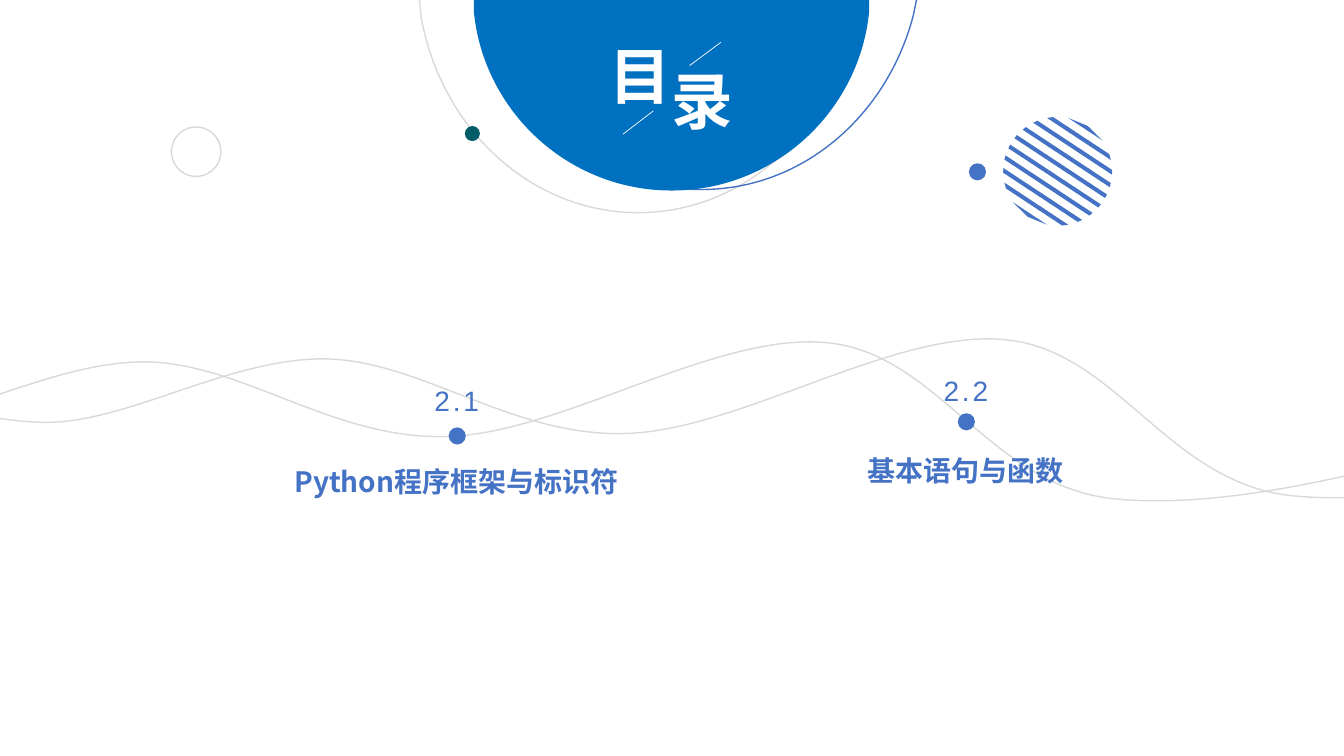
import math

import pptx
import pptx.dml.color
import pptx.enum.shapes
import pptx.enum.text
import pptx.oxml.ns
import pptx.util
from lxml import etree
from pptx.util import Inches

COLORS = {
    "blue": "4472C4",
    "deep_blue": "0070C0",
    "teal": "035C67",
    "gray": "D9D9D9",
    "white": "FFFFFF",
}
LATIN = "Arial"
CHINESE = "Noto Sans CJK SC"


def rgb(name):
    return pptx.dml.color.RGBColor.from_string(COLORS[name])


def corners(points):
    return [[point] for point in points]


def curves(points):
    return [points[index:index + 3] for index in range(0, len(points), 3)]


def bowl(center, bottom, top_half, rim, shoulder, base_half):
    half = [(top_half, 0), rim, shoulder, (base_half, bottom)]
    right = [(center + x, y) for x, y in half]
    left = [(center - x, y) for x, y in reversed(half)]
    arc = right[2:] + [(center, bottom)] + left[:3]
    return corners(right[:2]) + curves(arc) + corners(left[3:])


def stripes(center, radius, count, thickness):
    pitch = (2 * radius - thickness) / (count - 1)
    contours = []
    for index in range(count):
        top = -radius + index * pitch
        edge = [(math.sqrt(max(0, radius ** 2 - y ** 2)), y) for y in (top, top + thickness)]
        right = [(center[0] + x, center[1] + y) for x, y in edge]
        left = [(center[0] - x, center[1] + y) for x, y in reversed(edge)]
        contours.append(corners(right + left))
    return contours


class Painter:
    def __init__(self, slide):
        self.slide = slide
        self.shapes = slide.shapes

    def start_group(self):
        self.shapes = self.slide.shapes.add_group_shape().shapes

    def end_group(self):
        self.shapes = self.slide.shapes

    def style(self, shape, fill, line):
        shape.shadow.inherit = False
        if fill:
            shape.fill.solid()
            shape.fill.fore_color.rgb = rgb(fill)
        else:
            shape.fill.background()
        if line:
            shape.line.color.rgb = rgb(line)
            shape.line.width = pptx.util.Pt(1)
        else:
            shape.line.fill.background()
        return shape

    def outline(self, contours, fill=None, line=None):
        knots = [[(Inches(step[-1][0]), Inches(step[-1][1])) for step in contour]
                 for contour in contours]
        builder = self.shapes.build_freeform(*knots[0][0])
        for index, contour in enumerate(knots):
            if index:
                builder.move_to(*contour[0])
            builder.add_line_segments(contour[1:], close=bool(fill))
        shape = builder.convert_to_shape()
        self.bend(shape, [step for contour in contours for step in contour[1:]])
        return self.style(shape, fill, line)

    def bend(self, shape, steps):
        segments = list(shape._element.iter(pptx.oxml.ns.qn("a:lnTo")))
        for segment, step in zip(segments, steps):
            if len(step) == 3:
                segment.tag = pptx.oxml.ns.qn("a:cubicBezTo")
                for index, (x, y) in enumerate(step[:2]):
                    control = etree.Element(pptx.oxml.ns.qn("a:pt"))
                    control.set("x", str(Inches(x) - shape.left))
                    control.set("y", str(Inches(y) - shape.top))
                    segment.insert(index, control)

    def circle(self, left, top, size, fill, line=None):
        oval = pptx.enum.shapes.MSO_SHAPE.OVAL
        shape = self.shapes.add_shape(
            oval, Inches(left), Inches(top), Inches(size), Inches(size))
        return self.style(shape, fill, line)

    def line(self, start, end):
        connector = self.shapes.add_connector(
            pptx.enum.shapes.MSO_CONNECTOR.STRAIGHT,
            *(Inches(value) for value in start + end))
        connector.line.color.rgb = rgb("white")
        connector.line.width = pptx.util.Pt(0.5)
        etree.SubElement(connector._element.spPr, pptx.oxml.ns.qn("a:effectLst"))

    def text(self, content, left, top, width, height, size=20, color="blue",
             font=CHINESE, wrap=False):
        box = self.shapes.add_textbox(
            Inches(left), Inches(top), Inches(width), Inches(height))
        frame = box.text_frame
        frame.word_wrap = wrap
        frame.auto_size = pptx.enum.text.MSO_AUTO_SIZE.SHAPE_TO_FIT_TEXT
        paragraph = frame.paragraphs[0]
        paragraph.text = content
        paragraph.alignment = pptx.enum.text.PP_ALIGN.CENTER
        paragraph.font.size = pptx.util.Pt(size)
        paragraph.font.color.rgb = rgb(color)
        paragraph.font.name = font
        properties = paragraph._p.pPr.find(pptx.oxml.ns.qn("a:defRPr"))
        if font == CHINESE:
            paragraph.font.bold = True
            east_asian = etree.SubElement(properties, pptx.oxml.ns.qn("a:ea"))
            east_asian.set("typeface", font)
        else:
            properties.set("spc", "200")


def main():
    presentation = pptx.Presentation()
    presentation.slide_width = Inches(13.33)
    presentation.slide_height = Inches(7.5)
    painter = Painter(presentation.slides.add_slide(presentation.slide_layouts[6]))

    wave = [
        (-1.8, 3.44), (-1.11, 3.8), (-0.42, 4.17), (0.42, 4.19),
        (1.25, 4.21), (2.26, 3.55), (3.23, 3.56),
        (4.19, 3.58), (5.09, 4.34), (6.21, 4.3),
        (7.34, 4.27), (8.87, 3.26), (9.97, 3.37),
        (11.08, 3.47), (11.59, 4.81), (12.84, 4.92),
        (14.09, 5.04), (15.78, 4.55), (17.46, 4.06),
    ]
    for shift_x, shift_y in ((0, 0), (-1.77, 0.03)):
        points = [(x + shift_x, y + shift_y) for x, y in wave]
        painter.outline([corners(points[:1]) + curves(points[1:])], line="gray")

    gray_arc = bowl(6.33, 2.11, 2.17, (2.15, 0.18), (1.95, 1.28), 1.06)
    blue_arc = bowl(6.96, 1.88, 2.13, (2.1, 0.15), (1.84, 1.15), 1)
    title_disc = bowl(6.66, 1.89, 1.96, (1.96, 0.12), (1.86, 1.11), 1.02)
    painter.outline([gray_arc], line="gray")
    painter.outline([blue_arc], line="blue")

    sections = (
        ("2.2", "基本语句与函数", 9.58, 3.66, 4.1, 4.45, 2.17, False),
        ("2.1", "Python程序框架与标识符", 4.53, 3.76, 4.24, 4.56, 3.45, True),
    )
    for number, name, center, number_top, dot_top, name_top, width, wrap in sections:
        painter.text(number, center - 0.32, number_top, 0.64, 0.44, font=LATIN)
        painter.circle(center - 0.08, dot_top, 0.17, "blue")
        painter.text(name, center - width / 2, name_top, width, 0.44, wrap=wrap)

    painter.outline([title_disc], fill="deep_blue")
    striped_disc = painter.outline(stripes((10.49, 1.7), 0.54, 10, 0.04), fill="blue")
    striped_disc.rotation = 33.4

    painter.start_group()
    for character, left, top in (("目", 5.94, 0.33), ("录", 6.56, 0.58)):
        painter.text(character, left, top, 0.82, 0.84, size=44, color="white")
    painter.line((6.18, 1.33), (6.48, 1.1))
    painter.line((6.84, 0.65), (7.15, 0.42))
    painter.end_group()

    painter.circle(1.7, 1.26, 0.49, "white", "gray")
    painter.circle(9.61, 1.62, 0.17, "blue")
    painter.circle(4.61, 1.25, 0.15, "teal")

    presentation.save("out.pptx")


if __name__ == "__main__":
    main()
